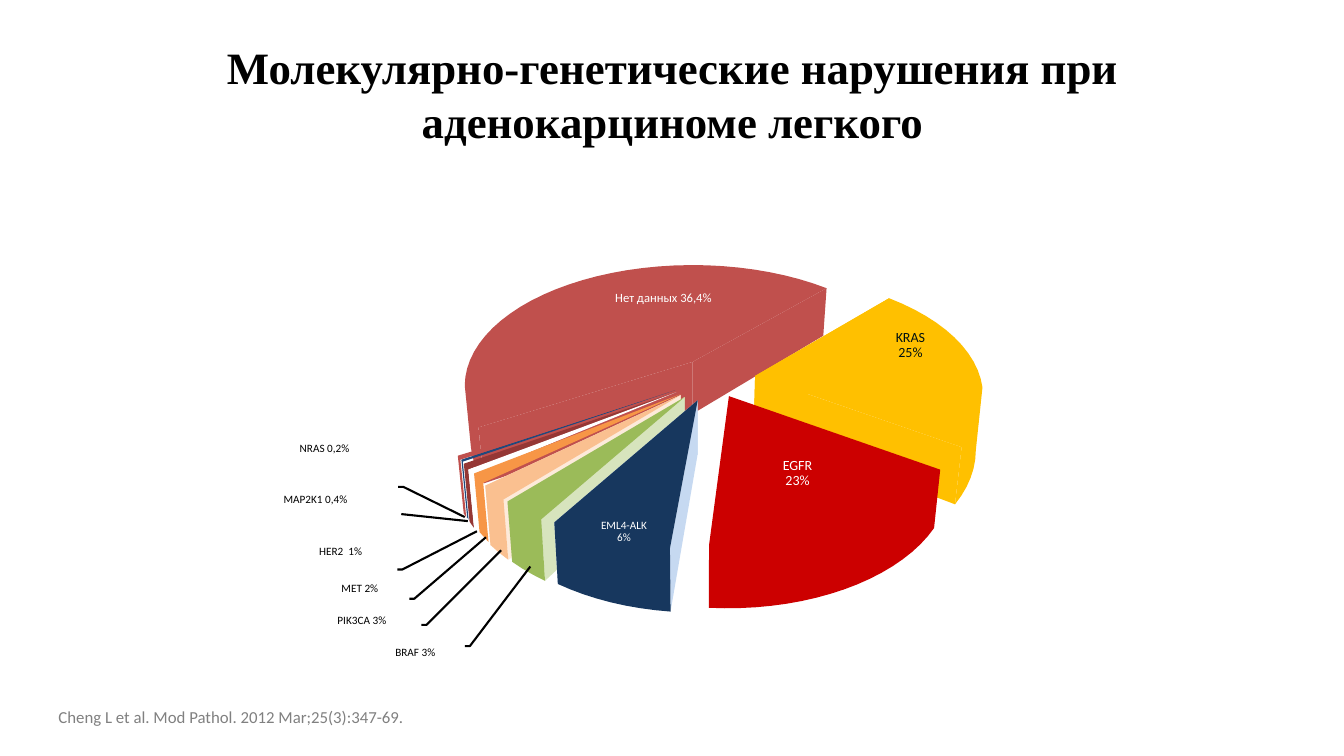
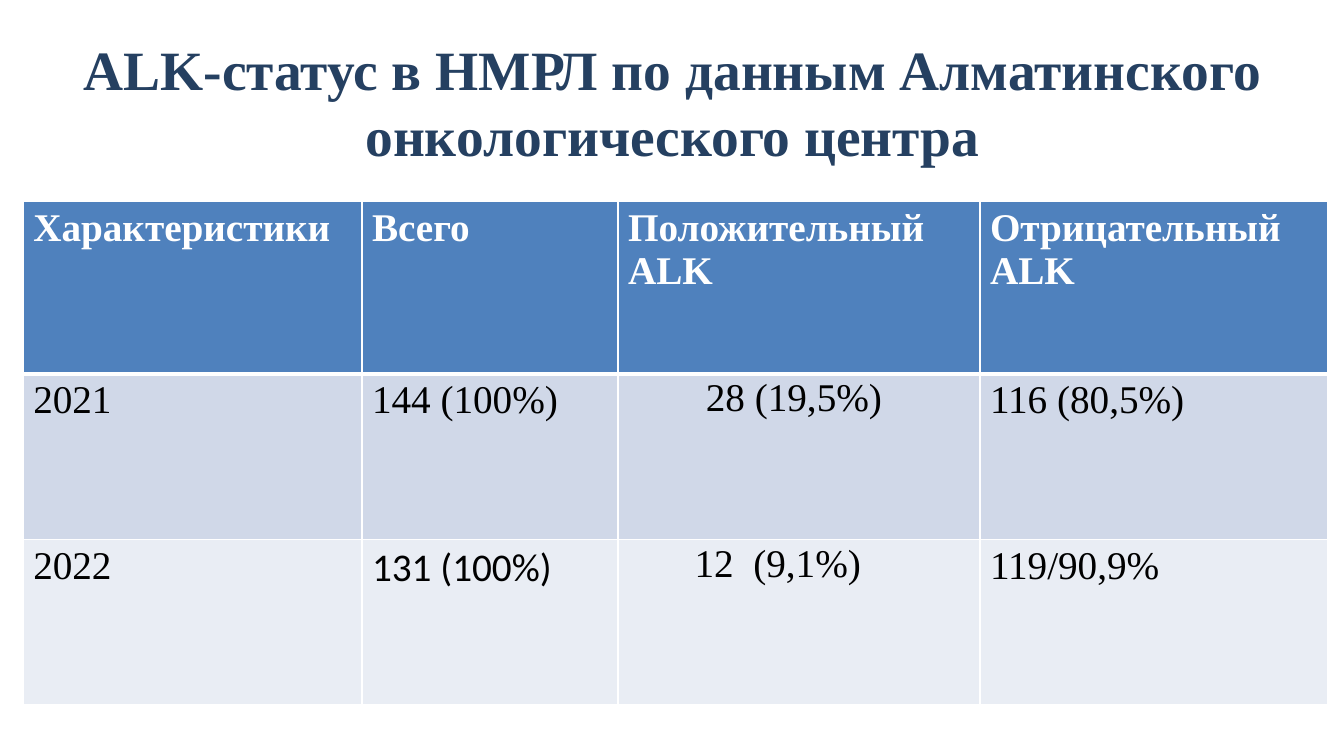
from itertools import product
from math import cos, radians, sin

from lxml.etree import SubElement
from pptx import Presentation
from pptx.dml.color import RGBColor as RGB
from pptx.enum.shapes import MSO_CONNECTOR as LINE
from pptx.enum.text import MSO_ANCHOR as ANCHOR, PP_ALIGN as ALIGN
from pptx.oxml.ns import qn
from pptx.util import Inches, Pt

COLORS = {
    "black": "000000", "white": "FFFFFF", "navy": "254061", "gray": "808080",
    "ink": "001111", "brick": "C0504D", "blue": "1F497D", "maroon": "953735",
    "orange": "F79646", "peach": "FAC090", "cream": "FDEADA", "green": "9BBB59",
    "mint": "D7E4BD", "ice": "C6D9F1", "deep": "17375E", "gold": "FFC000",
    "red": "CC0000", "header": "4F81BD", "odd": "D0D8E8", "even": "E9EDF4",
}
SERIF, SANS = "Times New Roman", "Calibri"
COLS, ROWS = 13.33, 7.5
MARGINS = (0.1, 0.05, 0.1, 0.05)
RADIUS_X, RADIUS_Y, PIE_AXIS = 2.26, 1.2, 6.9

SLICES = [
    ("brick", "brick", 6.87, 3.59, 0.24, -54, -200),
    ("blue", None, 6.7, 3.87, 0.28, 160, 159),
    ("brick", None, 6.69, 3.87, 0.28, 162, 160),
    ("maroon", None, 6.71, 3.89, 0.28, 159, 156),
    ("white", None, 6.71, 3.89, 0.28, 156, 153),
    ("orange", None, 6.75, 3.91, 0.28, 155, 150),
    ("peach", "cream", 6.75, 3.92, 0.28, 149, 141),
    ("green", "mint", 6.79, 3.94, 0.28, 141, 129),
    ("deep", "ice", 6.92, 3.97, 0.28, 129, 97),
    ("gold", "gold", 7.49, 3.73, 0.2, -54, 25),
    ("red", None, 7.23, 3.93, 0.28, 22, 95),
]
SLICE_LABELS = [
    ("Нет данных 36,4%", 6.58, 2.84, 9, "white"),
    ("KRAS\n25%", 9.03, 3.23, 10, "ink"),
    ("EGFR\n23%", 7.91, 4.5, 10, "white"),
    ("EML4-ALK\n6%", 6.19, 5.11, 8, "white"),
]
SIDE_LABELS = [
    ("BRAF 3%", 4.12, 6.37),
    ("PIK3CA 3%", 3.59, 6.05),
    ("HER2  1%", 3.38, 5.37),
    ("MET 2%", 3.57, 5.73),
    ("MAP2K1 0,4%", 3.13, 4.85),
    ("NRAS 0,2%", 3.22, 4.34),
]
ELBOWS = [
    (4.61, 5.13, 4, 4.83),
    (4.73, 5.27, 3.99, 5.65),
    (4.82, 5.33, 4.11, 5.94),
    (4.97, 5.46, 4.23, 6.2),
    (5.26, 5.62, 4.66, 6.41),
]
STATUS = [
    ["Характеристики", "Всего", "Положительный ALK", "Отрицательный ALK"],
    ["2021", "144 (100%)", "28 (19,5%)", "116 (80,5%)"],
    ["2022", "131 (100%)", "12  (9,1%)", "119/90,9%"],
]
STATUS_FORMATS = {
    (1, 2): dict(align=ALIGN.CENTER, spacing=1.07, margins=(0, 0, 0.1, 0)),
    (2, 1): dict(font=SANS),
    (2, 2): dict(spacing=1.07, margins=(0.76, 0, 0.07, 0)),
}


def color(name):
    return RGB.from_string(COLORS[name])


def lower(point):
    x, y = point
    return x + 0.025 * (PIE_AXIS - x), 1.06 * y + 0.3


def write(tf, text, size=12, fill="black", font=SANS, bold=False, align=ALIGN.LEFT,
          spacing=None, anchor=ANCHOR.TOP):
    tf.word_wrap = True
    tf.vertical_anchor = anchor
    p = tf.paragraphs[0]
    p.alignment, p.line_spacing = align, spacing
    for i, line in enumerate(text.split("\n")):
        if i:
            p.add_line_break()
        r = p.add_run()
        r.text = line
        r.font.name, r.font.size, r.font.bold = font, Pt(size), bold
        r.font.color.rgb = color(fill)


class Deck:
    """Builds slides on a grid of one-inch columns and rows."""

    def __init__(self):
        self.prs = Presentation()
        self.cell = Inches(1)
        self.prs.slide_width, self.prs.slide_height = self.grid(COLS, ROWS)

    def grid(self, *cells):
        return [round(n * self.cell) for n in cells]

    def slide(self, title, top, size, fill):
        self.s = self.prs.slides.add_slide(self.prs.slide_layouts[6])
        self.text(title, 0.67, top, 12, 1.25, size=size, fill=fill, font=SERIF,
                  bold=True, align=ALIGN.CENTER, anchor=ANCHOR.MIDDLE)

    def margins(self, box, cells):
        (box.margin_left, box.margin_top,
         box.margin_right, box.margin_bottom) = self.grid(*cells)

    def text(self, text, x, y, w, h, margins=MARGINS, **fmt):
        tf = self.s.shapes.add_textbox(*self.grid(x, y, w, h)).text_frame
        self.margins(tf, margins)
        write(tf, text, **fmt)

    def label(self, text, center, top, size=8, fill="black", width=1.6):
        self.text(text, center - width / 2, top, width, 0.54, size=size, fill=fill,
                  align=ALIGN.CENTER, spacing=0.9)

    def outline(self, points, close):
        start, *rest = [self.grid(*pt) for pt in points]
        fb = self.s.shapes.build_freeform(*start, scale=1.0)
        fb.add_line_segments(rest, close=close)
        sp = fb.convert_to_shape()
        sp.shadow.inherit = False
        return sp

    def face(self, fill, points):
        sp = self.outline(points, True)
        sp.fill.solid()
        sp.fill.fore_color.rgb = color(fill)
        sp.line.fill.background()

    def pie_slice(self, fill, wall, x, y, lift, start, end):
        steps = max(1, abs(end - start) // 4)
        angles = [radians(start + (end - start) * i / steps) for i in range(steps + 1)]
        rim = [(x + RADIUS_X * cos(a), y + lift + RADIUS_Y * sin(a)) for a in angles]
        tip, edges = (x, y), (rim[0], rim[-1])
        if wall:
            for edge in edges:
                self.face(wall, [tip, edge, lower(edge), lower(tip)])
        front = [lower(pt) if sin(a) > 0 else pt for a, pt in zip(angles, rim)]
        self.face(fill, [tip, edges[0], *front, edges[1]])

    def stroke(self, sp):
        sp.line.color.rgb = color("black")
        sp.line.width = Pt(1.5)

    def elbow(self, x1, y1, x2, y2, hook=0.05):
        sp = self.outline([(x1, y1), (x2, y2), (x2 - hook, y2)], False)
        sp.fill.background()
        self.stroke(sp)

    def line(self, *ends):
        sp = self.s.shapes.add_connector(LINE.STRAIGHT, *self.grid(*ends))
        SubElement(sp._element.spPr, qn("a:effectLst"))
        self.stroke(sp)

    def borders(self, cell, **widths):
        tc_pr = cell._tc.get_or_add_tcPr()
        for i, (side, width) in enumerate(widths.items()):
            ln = SubElement(tc_pr, qn("a:" + side), w=str(Pt(width)))
            tc_pr.insert(i, ln)
            fill = SubElement(ln, qn("a:solidFill"))
            SubElement(fill, qn("a:srgbClr"), val=COLORS["white"])

    def table(self, rows, x, y, widths, heights, formats):
        size = self.grid(x, y, sum(widths), sum(heights))
        tbl = self.s.shapes.add_table(len(rows), len(widths), *size).table
        for col, w in zip(tbl.columns, self.grid(*widths)):
            col.width = w
        for row, h in zip(tbl.rows, self.grid(*heights)):
            row.height = h
        for i, j in product(range(len(rows)), range(len(widths))):
            cell, head = tbl.cell(i, j), i == 0
            fmt = dict(font=SERIF, size=28, bold=head, margins=MARGINS,
                       fill="white" if head else "black")
            fmt.update(formats.get((i, j), {}))
            self.margins(cell, fmt.pop("margins"))
            write(cell.text_frame, rows[i][j], **fmt)
            cell.fill.solid()
            cell.fill.fore_color.rgb = color(("header", "odd", "even")[i])
            self.borders(cell, lnL=1, lnR=1, lnT=3 if i == 1 else 1,
                         lnB=3 if head else 1)


def main():
    deck = Deck()
    deck.slide("Молекулярно-генетические нарушения при аденокарциноме легкого",
               0.3, 32, "black")
    for part in SLICES:
        deck.pie_slice(*part)
    for label in SLICE_LABELS + SIDE_LABELS:
        deck.label(*label)
    for ends in ELBOWS:
        deck.elbow(*ends)
    deck.line(4.64, 5.17, 3.98, 5.1)
    deck.text("Cheng L et al. Mod Pathol. 2012 Mar;25(3):347-69.", 0.45, 6.94, 8.68,
              0.34, margins=(0.13, 0.07, 0.13, 0.07), fill="gray")

    deck.slide("ALK-статус в НМРЛ по данным Алматинского онкологического центра",
               0.38, 39.6, "navy")
    deck.table(STATUS, 0.23, 2, [3.36, 2.54, 3.59, 3.45], [1.71, 1.64, 1.64],
               STATUS_FORMATS)
    deck.prs.save("out.pptx")


if __name__ == "__main__":
    main()
